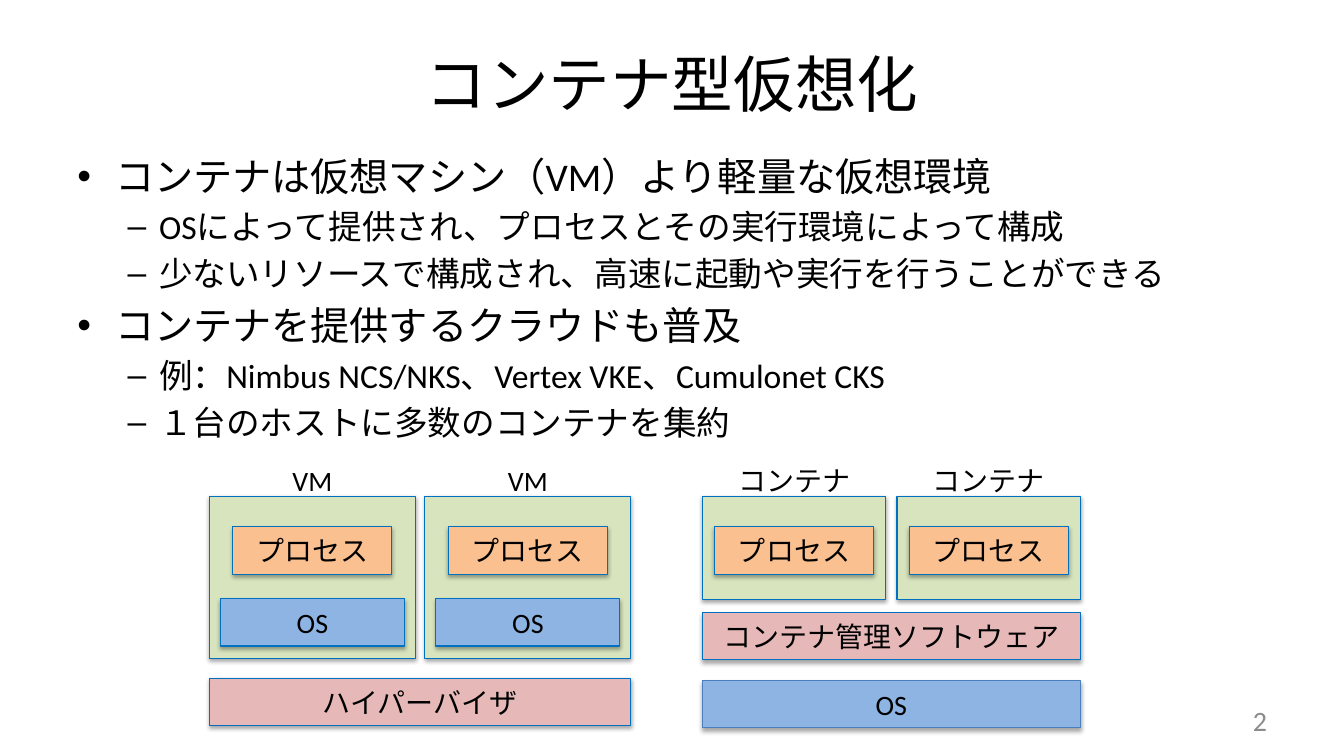
from lxml.etree import SubElement
from pptx import Presentation
from pptx.dml.color import RGBColor
from pptx.enum.shapes import MSO_SHAPE
from pptx.enum.text import MSO_ANCHOR, PP_ALIGN
from pptx.oxml.ns import qn
from pptx.util import Cm, Pt

BLACK = RGBColor(0x00, 0x00, 0x00)
GRAY = RGBColor(0x8C, 0x8C, 0x8C)
GREEN = RGBColor(0xD7, 0xE4, 0xBD)
ORANGE = RGBColor(0xFA, 0xC0, 0x90)
BLUE = RGBColor(0x8E, 0xB4, 0xE3)
PINK = RGBColor(0xE6, 0xB9, 0xB8)
OUTLINE = RGBColor(0x00, 0x70, 0xC0)
HOST_OUTLINE = RGBColor(0x4B, 0x7E, 0xBC)
FONT = "Calibri"
BAR_HEIGHT = 1.19

# Level, text
POINTS = [
    (0, "コンテナは仮想マシン（VM）より軽量な仮想環境"),
    (1, "OSによって提供され、プロセスとその実行環境によって構成"),
    (1, "少ないリソースで構成され、高速に起動や実行を行うことができる"),
    (0, "コンテナを提供するクラウドも普及"),
    (1, "例：Nimbus NCS/NKS、Vertex VKE、Cumulonet CKS"),
    (1, "１台のホストに多数のコンテナを集約"),
]
# Size, bullet, left margin in cm, hanging indent in cm
LEVELS = [(28, "•", 0.95, 0.95), (24, "–", 2.06, 0.79)]


def add_run(paragraph, text, size, color=BLACK):
    run = paragraph.add_run()
    run.text = text
    run.font.size = Pt(size)
    run.font.name = FONT
    run.font.color.rgb = color


def add_text(slide, box, text, size, align, color=BLACK, anchor=MSO_ANCHOR.TOP):
    frame = slide.shapes.add_textbox(*map(Cm, box)).text_frame
    frame.word_wrap = True
    frame.vertical_anchor = anchor
    frame.paragraphs[0].alignment = align
    add_run(frame.paragraphs[0], text, size, color)


def add_shadow(block):
    block.shadow.inherit = False
    effects = block._element.spPr.find(qn("a:effectLst"))
    shadow = SubElement(effects, qn("a:outerShdw"), blurRad=str(Pt(3.1)),
                        dist=str(Pt(1.8)), dir="5400000", rotWithShape="0")
    black = SubElement(shadow, qn("a:srgbClr"), val="000000")
    SubElement(black, qn("a:alpha"), val="35000")


def add_block(slide, box, fill, text="", outline=OUTLINE):
    block = slide.shapes.add_shape(MSO_SHAPE.RECTANGLE, *map(Cm, box))
    block.fill.solid()
    block.fill.fore_color.rgb = fill
    block.line.color.rgb = outline
    block.line.width = Pt(0.75)
    add_shadow(block)
    if text:
        frame = block.text_frame
        frame.vertical_anchor = MSO_ANCHOR.MIDDLE
        frame.paragraphs[0].alignment = PP_ALIGN.CENTER
        add_run(frame.paragraphs[0], text, 20)


def place_title(slide, box, text):
    title = slide.shapes.title
    title.left, title.top, title.width, title.height = map(Cm, box)
    title.text_frame.vertical_anchor = MSO_ANCHOR.MIDDLE
    heading = title.text_frame.paragraphs[0]
    heading.alignment = PP_ALIGN.CENTER
    add_run(heading, text, 44)


def add_points(slide, box):
    frame = slide.shapes.add_textbox(*map(Cm, box)).text_frame
    frame.word_wrap = True
    for index, (level, text) in enumerate(POINTS):
        size, bullet, margin, hanging = LEVELS[level]
        point = frame.add_paragraph() if index else frame.paragraphs[0]
        point.level = level
        point.space_before = Pt(size * 0.2)
        props = point._p.get_or_add_pPr()
        props.set("marL", str(Cm(margin)))
        props.set("indent", str(-Cm(hanging)))
        SubElement(props, qn("a:buFont"), typeface="Arial")
        SubElement(props, qn("a:buChar"), char=bullet)
        add_run(point, text, size)


def add_environment(slide, box, label, has_os):
    """One VM or container: label above, process and optional OS inside."""
    left, top, width, height = box

    def centered(offset, inner_width):
        return (left + (width - inner_width) / 2, top + offset,
                inner_width, BAR_HEIGHT)

    add_block(slide, box, GREEN)
    add_text(slide, (left, top - 0.94, width, 1.12), label, 20, PP_ALIGN.CENTER)
    add_block(slide, centered(0.78, 4.01), ORANGE, "プロセス")
    if has_os:
        add_block(slide, centered(2.59, 4.64), BLUE, "OS")


def add_stack(slide, box, gap, label, has_os, bars):
    """Two environments side by side on full-width bars."""
    left, top, width, height = box
    cell = (width - gap) / 2
    for column in range(2):
        add_environment(slide, (left + column * (cell + gap), top, cell, height),
                        label, has_os)
    for offset, fill, text, outline in bars:
        add_block(slide, (left, top + offset, width, BAR_HEIGHT),
                  fill, text, outline)


def main():
    deck = Presentation()
    deck.slide_width, deck.slide_height = Cm(33.87), Cm(19.05)
    slide = deck.slides.add_slide(deck.slide_layouts[5])

    # Heading and points
    place_title(slide, (1.7, 0.76, 30.48, 2.64), "コンテナ型仮想化")
    add_points(slide, (1.7, 3.71, 30.48, 7.8))

    # Virtual machines
    add_stack(slide, (5.28, 12.5, 10.62, 4.09), 0.24, "VM", True,
              [(4.59, PINK, "ハイパーバイザ", OUTLINE)])

    # Containers
    add_stack(slide, (17.7, 12.5, 9.53, 2.6), 0.28, "コンテナ", False,
              [(2.94, PINK, "コンテナ管理ソフトウェア", OUTLINE),
               (4.65, BLUE, "OS", HOST_OUTLINE)])

    # Page number
    add_text(slide, (24.28, 17.65, 7.9, 1.02), "2", 20, PP_ALIGN.RIGHT,
             GRAY, MSO_ANCHOR.MIDDLE)

    deck.save("out.pptx")


if __name__ == "__main__":
    main()
